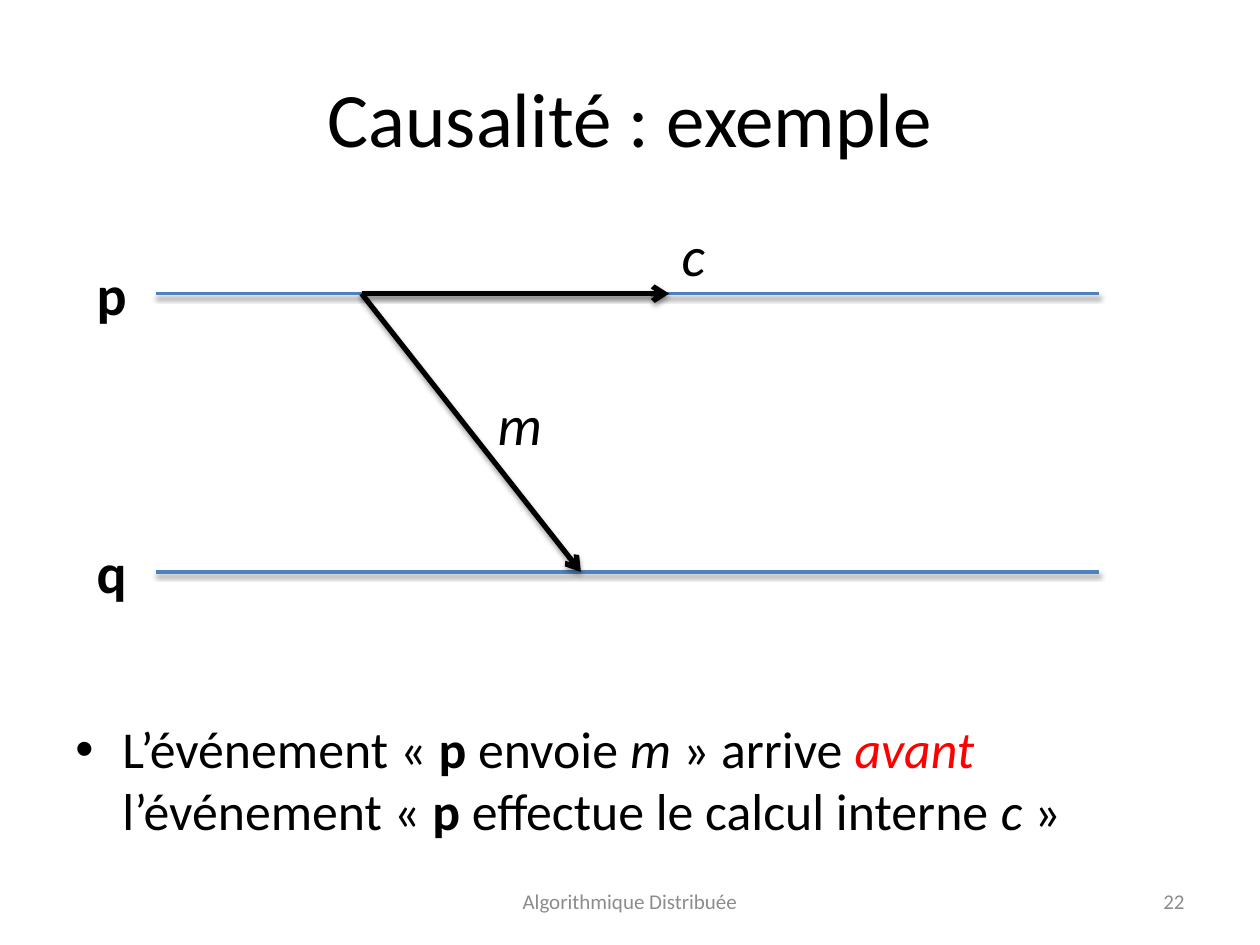
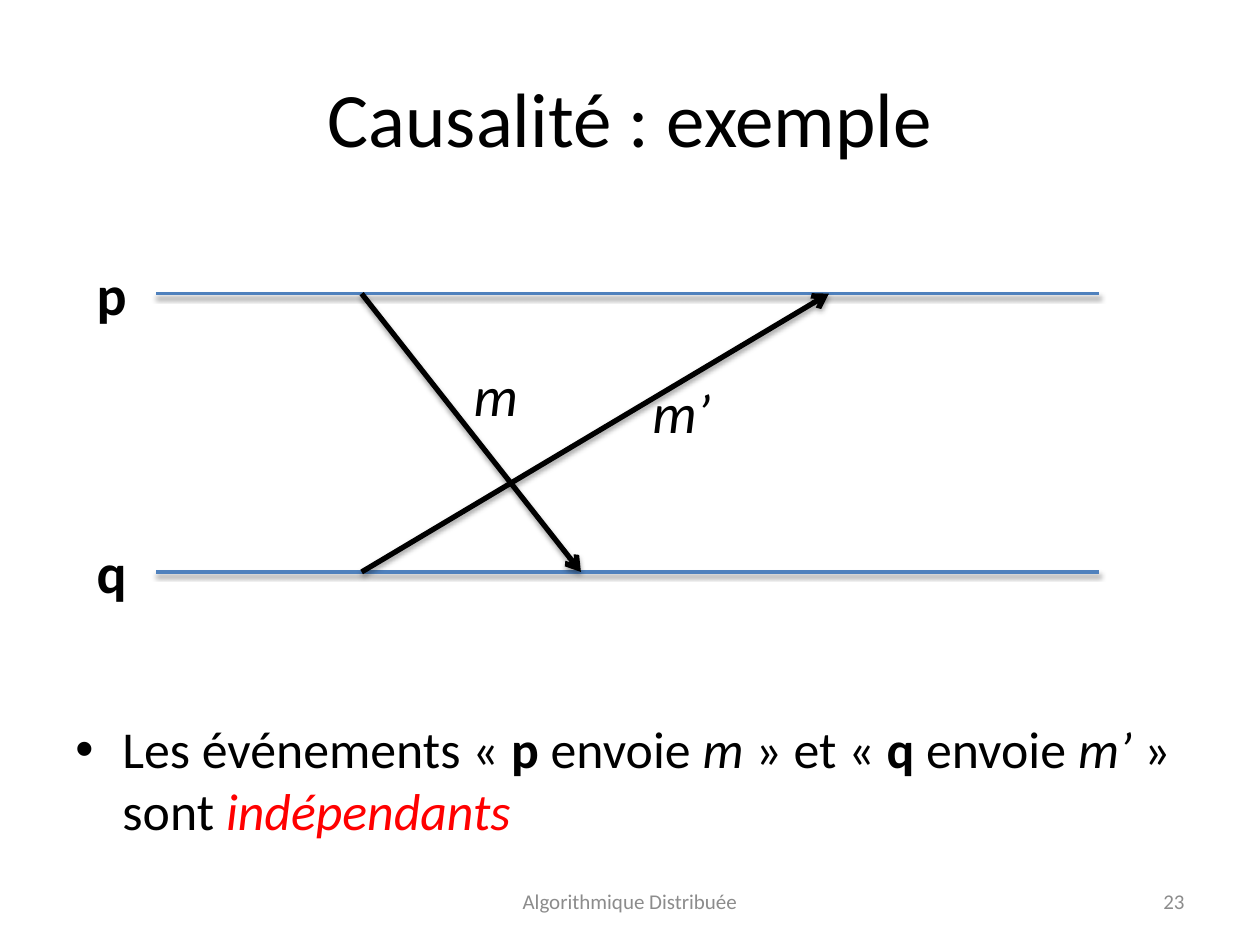
"""Build two slides on causality between the events of processes p and q."""
from lxml.etree import SubElement
from pptx import Presentation
from pptx.dml.color import RGBColor
from pptx.enum.shapes import MSO_CONNECTOR
from pptx.enum.text import MSO_ANCHOR, PP_ALIGN
from pptx.oxml import parse_xml
from pptx.oxml.ns import qn
from pptx.util import Cm, Pt

FONT = "Calibri"
BLACK, RED, GREY, BLUE = "000000", "FF0000", "8C8C8C", "4F81BD"
PLAIN = (False, False, BLACK)
BOLD = (True, False, BLACK)
ITALIC = (False, True, BLACK)
ACCENT = (False, True, RED)
MUTED = (False, False, GREY)

LINE_START, LINE_END = 3.15, 22.15
PROCESS_Y = {"p": 5.92, "q": 11.53}
SEND_X, RECEIVE_X = 7.29, 11.71
LABEL_HEIGHT = 1.63
SHADOW = (
    '<a:effectLst xmlns:a="http://schemas.openxmlformats.org/drawingml/2006/main">'
    '<a:outerShdw blurRad="40000" dist="20000" dir="5400000" rotWithShape="0">'
    '<a:srgbClr val="000000"><a:alpha val="38000"/></a:srgbClr>'
    '</a:outerShdw></a:effectLst>'
)


def add_text(slide, box, runs, size, align=PP_ALIGN.LEFT, anchor=MSO_ANCHOR.TOP, wrap=True):
    shape = slide.shapes.add_textbox(*[Cm(length) for length in box])
    frame = shape.text_frame
    frame.word_wrap = wrap
    frame.vertical_anchor = anchor
    paragraph = frame.paragraphs[0]
    paragraph.alignment = align
    for text, (bold, italic, color) in runs:
        run = paragraph.add_run()
        run.text = text
        run.font.name = FONT
        run.font.size = Pt(size)
        run.font.bold = bold
        run.font.italic = italic
        run.font.color.rgb = RGBColor.from_string(color)
    return paragraph


def add_line(slide, start, end, color, width, arrow=False):
    connector = slide.shapes.add_connector(
        MSO_CONNECTOR.STRAIGHT, *[Cm(length) for length in (*start, *end)])
    connector.line.color.rgb = RGBColor.from_string(color)
    connector.line.width = Pt(width)
    if arrow:
        SubElement(connector.line._get_or_add_ln(), qn("a:tailEnd"), type="arrow")
    connector._element.spPr.append(parse_xml(SHADOW))


message_start, message_end = (SEND_X, PROCESS_Y["p"]), (RECEIVE_X, PROCESS_Y["q"])
slides_content = [
    {
        "number": "22",
        "arrows": [(message_start, message_end), (message_start, (13.49, PROCESS_Y["p"]))],
        "labels": [("m", 9.78, 7.72, 1.7), ("c", 13.49, 4.32, 1.27)],
        "statement": [
            ("L’événement « ", PLAIN), ("p ", BOLD), ("envoie ", PLAIN), ("m ", ITALIC),
            ("» arrive ", PLAIN), ("avant ", ACCENT), ("l’événement « ", PLAIN),
            ("p ", BOLD), ("effectue le calcul interne", PLAIN), (" c ", ITALIC), ("»", PLAIN),
        ],
    },
    {
        "number": "23",
        "arrows": [(message_start, message_end),
                   ((SEND_X, PROCESS_Y["q"]), (16.71, PROCESS_Y["p"]))],
        "labels": [("m", 9.3, 7.14, 1.7), ("m’", 12.9, 7.49, 1.98)],
        "statement": [
            ("Les événements « ", PLAIN), ("p ", BOLD), ("envoie ", PLAIN), ("m ", ITALIC),
            ("» et « ", PLAIN), ("q ", BOLD), ("envoie ", PLAIN), ("m’ ", ITALIC),
            ("» sont ", PLAIN), ("indépendants", ACCENT),
        ],
    },
]

presentation = Presentation()
presentation.slide_width = Cm(25.4)
presentation.slide_height = Cm(19.05)

for content in slides_content:
    slide = presentation.slides.add_slide(presentation.slide_layouts[6])
    add_text(slide, (1.27, 0.76, 22.86, 3.18), [("Causalité : exemple", PLAIN)], 44,
             PP_ALIGN.CENTER, MSO_ANCHOR.MIDDLE)
    add_text(slide, (18.2, 17.66, 5.93, 1.01), [(content["number"], MUTED)], 12,
             PP_ALIGN.RIGHT, MSO_ANCHOR.MIDDLE)
    add_text(slide, (8.68, 17.66, 8.04, 1.01), [("Algorithmique Distribuée", MUTED)], 12,
             PP_ALIGN.CENTER, MSO_ANCHOR.MIDDLE)

    statement = add_text(slide, (1.27, 14.33, 22.86, 2.69), content["statement"], 29.6)
    properties = statement._p.get_or_add_pPr()
    properties.set("marL", str(Cm(0.95)))
    properties.set("indent", str(-Cm(0.95)))
    SubElement(properties, qn("a:buFont"), typeface="Arial")
    SubElement(properties, qn("a:buChar"), char="•")

    for process, y in PROCESS_Y.items():
        add_line(slide, (LINE_START, y), (LINE_END, y), BLUE, 2)
        add_text(slide, (1.7, y - LABEL_HEIGHT / 2, 1.12, LABEL_HEIGHT), [(process, BOLD)], 32,
                 wrap=False)
    for start, end in content["arrows"]:
        add_line(slide, start, end, BLACK, 3, arrow=True)
    for text, left, top, width in content["labels"]:
        add_text(slide, (left, top, width, LABEL_HEIGHT), [(text, ITALIC)], 32, wrap=False)

presentation.save("out.pptx")
